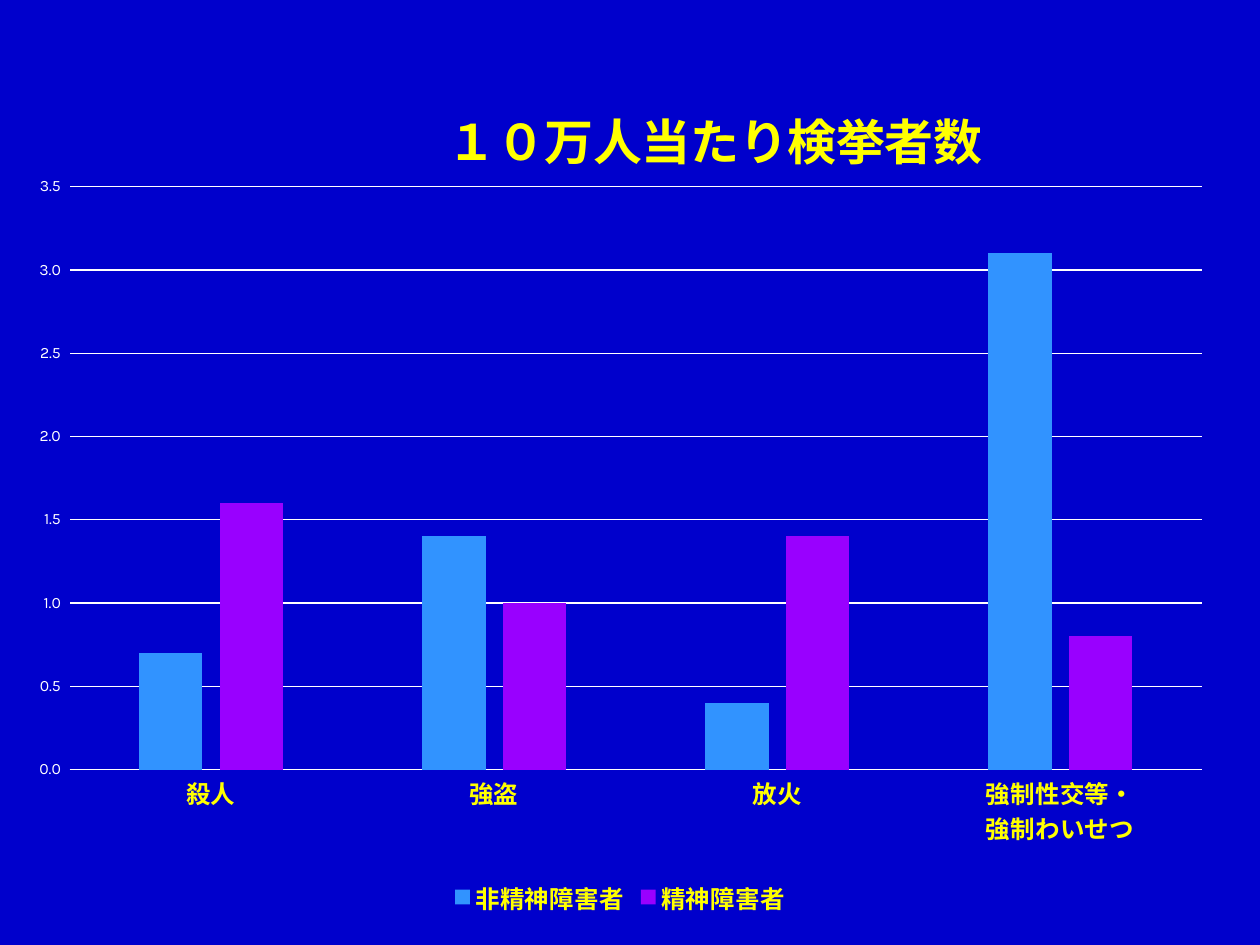
from lxml.etree import SubElement
from pptx import Presentation
from pptx.chart.data import CategoryChartData as ChartData
from pptx.dml.color import RGBColor
from pptx.enum.chart import XL_CHART_TYPE as ChartType
from pptx.enum.chart import XL_LEGEND_POSITION as LegendPosition
from pptx.enum.chart import XL_TICK_MARK as TickMark
from pptx.oxml.ns import qn
from pptx.util import Pt

BLUE = RGBColor(0x00, 0x00, 0xCC)
YELLOW = RGBColor(0xFF, 0xFF, 0x00)
WHITE = RGBColor(0xFF, 0xFF, 0xFF)
SKY = RGBColor(0x31, 0x93, 0xFF)
PURPLE = RGBColor(0x99, 0x00, 0xFF)


def style_font(font, size, color, bold=False):
    font.name = "Karla"
    font.size = Pt(size)
    font.bold = bold
    font.color.rgb = color


def set_layout(parent, position, **settings):
    """Place a chart part by fractions of the chart's size."""
    for old in parent.findall(qn("c:layout")):
        parent.remove(old)
    layout = SubElement(parent, qn("c:layout"))
    parent.insert(position, layout)
    manual = SubElement(layout, qn("c:manualLayout"))
    for tag, value in settings.items():
        SubElement(manual, qn(f"c:{tag}")).set("val", str(value))


deck = Presentation()
deck.slide_width, deck.slide_height = Pt(720), Pt(540)
page = deck.slides.add_slide(deck.slide_layouts[6])
page.background.fill.solid()
page.background.fill.fore_color.rgb = BLUE

# Chart data
data = ChartData(number_format="0.0_ ")
data.categories = ["殺人", "強盗", "放火", "強制性交等・\n強制わいせつ"]
data.add_series("非精神障害者", [0.7, 1.4, 0.4, 3.1])
data.add_series("精神障害者", [1.6, 1, 1.4, 0.8])
chart = page.shapes.add_chart(
    ChartType.COLUMN_CLUSTERED, Pt(8.64), Pt(20.88), Pt(691.92), Pt(504.72), data
).chart
style_font(chart.font, 10, WHITE)

# Title
chart.has_title = True
title = chart.chart_title
span = title.text_frame.paragraphs[0].add_run()
span.text = "１０万人当たり検挙者数"
style_font(span.font, 28, YELLOW, bold=True)
title.include_in_layout = False
set_layout(title._element, 1, xMode="edge", yMode="edge", x=0.35, y=0.06)

# Columns
plot = chart.plots[0]
plot.gap_width = 219
plot.overlap = -27
plot.vary_by_categories = False
for series, color in zip(plot.series, (SKY, PURPLE)):
    series.format.fill.solid()
    series.format.fill.fore_color.rgb = color
    series.invert_if_negative = False
plot_area = chart._chartSpace.find(qn("c:chart")).find(qn("c:plotArea"))
set_layout(plot_area, 0, layoutTarget="inner", xMode="edge", yMode="edge",
           x=0.045, y=0.17, w=0.935, h=0.66)

# Axes
names, values = chart.category_axis, chart.value_axis
for axis in (names, values):
    axis.major_tick_mark = axis.minor_tick_mark = TickMark.NONE
style_font(names.tick_labels.font, 14, YELLOW, bold=True)
style_font(values.tick_labels.font, 9, WHITE)
values.minimum_scale, values.maximum_scale, values.major_unit = 0, 3.5, 0.5
values.tick_labels.number_format = "0.0_ "
values.tick_labels.number_format_is_linked = False
values.format.line.fill.background()
for line in (names.format.line, values.major_gridlines.format.line):
    line.color.rgb = WHITE
    line.width = Pt(0.75)

# Legend
chart.has_legend = True
chart.legend.position = LegendPosition.BOTTOM
chart.legend.include_in_layout = False
style_font(chart.legend.font, 14, YELLOW, bold=True)

deck.save("out.pptx")
